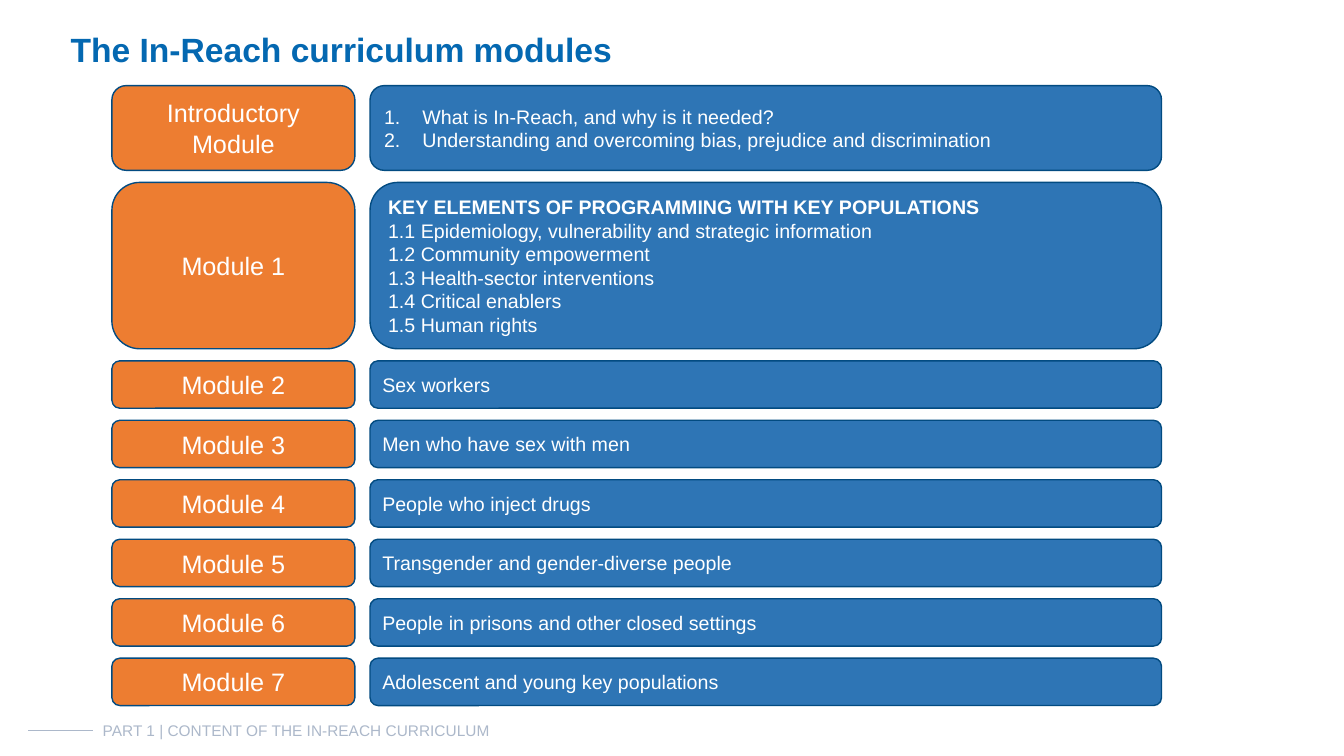
"""Build the slide that lists the In-Reach curriculum modules."""
from lxml import etree
from pptx import Presentation
from pptx.dml.color import RGBColor
from pptx.enum.shapes import MSO_CONNECTOR, MSO_SHAPE
from pptx.enum.text import MSO_ANCHOR, PP_ALIGN
from pptx.oxml.ns import qn
from pptx.util import Inches, Pt

LEFT, CENTER = PP_ALIGN.LEFT, PP_ALIGN.CENTER
TOP, MIDDLE = MSO_ANCHOR.TOP, MSO_ANCHOR.MIDDLE
ROUNDED = MSO_SHAPE.ROUNDED_RECTANGLE
STRAIGHT = MSO_CONNECTOR.STRAIGHT

ORANGE, BLUE, OUTLINE = "ED7D31", "2E75B5", "024B81"
WHITE, TITLE_BLUE, GREY = "FFFFFF", "0468B1", "ACB8CA"

FIRST_TOP, ROW_GAP = 0.85, 0.12
ROWS = [
    ("Introductory Module", 0.84, [
        "What is In-Reach, and why is it needed?",
        "Understanding and overcoming bias, prejudice and discrimination",
    ]),
    ("Module 1", 1.65, [
        "KEY ELEMENTS OF PROGRAMMING WITH KEY POPULATIONS",
        "1.1 Epidemiology, vulnerability and strategic information",
        "1.2 Community empowerment",
        "1.3 Health-sector interventions",
        "1.4 Critical enablers",
        "1.5 Human rights",
    ]),
    ("Module 2", 0.47, ["Sex workers"]),
    ("Module 3", 0.47, ["Men who have sex with men"]),
    ("Module 4", 0.47, ["People who inject drugs"]),
    ("Module 5", 0.47, ["Transgender and gender-diverse people"]),
    ("Module 6", 0.47, ["People in prisons and other closed settings"]),
    ("Module 7", 0.47, ["Adolescent and young key populations"]),
]


def color(hex_value):
    """Turn a hex string into a colour."""
    return RGBColor.from_string(hex_value)


def write(box, lines, size, ink, align=LEFT, anchor=MIDDLE,
          bold_first=False, numbered=False, spacing=1.0):
    """Fill a box with one formatted paragraph per line."""
    frame = box.text_frame
    frame.word_wrap = True
    frame.vertical_anchor = anchor
    for index, line in enumerate(lines):
        para = frame.add_paragraph() if index else frame.paragraphs[0]
        para.alignment = align
        para.line_spacing = spacing
        para.space_before = Pt(0)
        if numbered:
            properties = para._p.get_or_add_pPr()
            properties.set("marL", str(Inches(0.38)))
            properties.set("indent", str(Inches(-0.38)))
            etree.SubElement(properties, qn("a:buAutoNum"), type="arabicPeriod")
        span = para.add_run()
        span.text = line
        span.font.name = "Arial"
        span.font.size = Pt(size)
        span.font.bold = bold_first and index == 0
        span.font.color.rgb = color(ink)


deck = Presentation()
deck.slide_width, deck.slide_height = Inches(13.33), Inches(7.5)
page = deck.slides.add_slide(deck.slide_layouts[5])

title = page.shapes.title
title.left, title.top = Inches(0.6), Inches(0.28)
title.width, title.height = Inches(8.23), Inches(0.46)
write(title, ["The In-Reach curriculum modules"], 24, TITLE_BLUE,
      anchor=TOP, bold_first=True, spacing=0.9)

row_top = FIRST_TOP
for name, height, topics in ROWS:
    pair = []
    for left, width, fill in ((1.11, 2.41, ORANGE), (3.67, 7.85, BLUE)):
        box = page.shapes.add_shape(ROUNDED, Inches(left), Inches(row_top),
                                    Inches(width), Inches(height))
        box.shadow.inherit = False
        box.fill.solid()
        box.fill.fore_color.rgb = color(fill)
        box.line.color.rgb = color(OUTLINE)
        box.line.width = Pt(1)
        pair.append(box)
    name_box, topic_box = pair
    write(name_box, [name], 18, WHITE, align=CENTER)
    write(topic_box, topics, 14, WHITE, bold_first=name == "Module 1",
          numbered=name == "Introductory Module")
    row_top += height + ROW_GAP

footer = page.shapes.add_textbox(Inches(0.92), Inches(7.1), Inches(4.69), Inches(0.29))
write(footer, ["PART 1 | CONTENT OF THE IN-REACH CURRICULUM"], 11, GREY, anchor=TOP)

rule = page.shapes.add_connector(STRAIGHT, Inches(0.28), Inches(7.25),
                                 Inches(0.92), Inches(7.25))
rule.line.color.rgb = color(GREY)
rule.line.width = Pt(0.75)
etree.SubElement(rule._element.spPr, qn("a:effectLst"))

deck.save("out.pptx")
